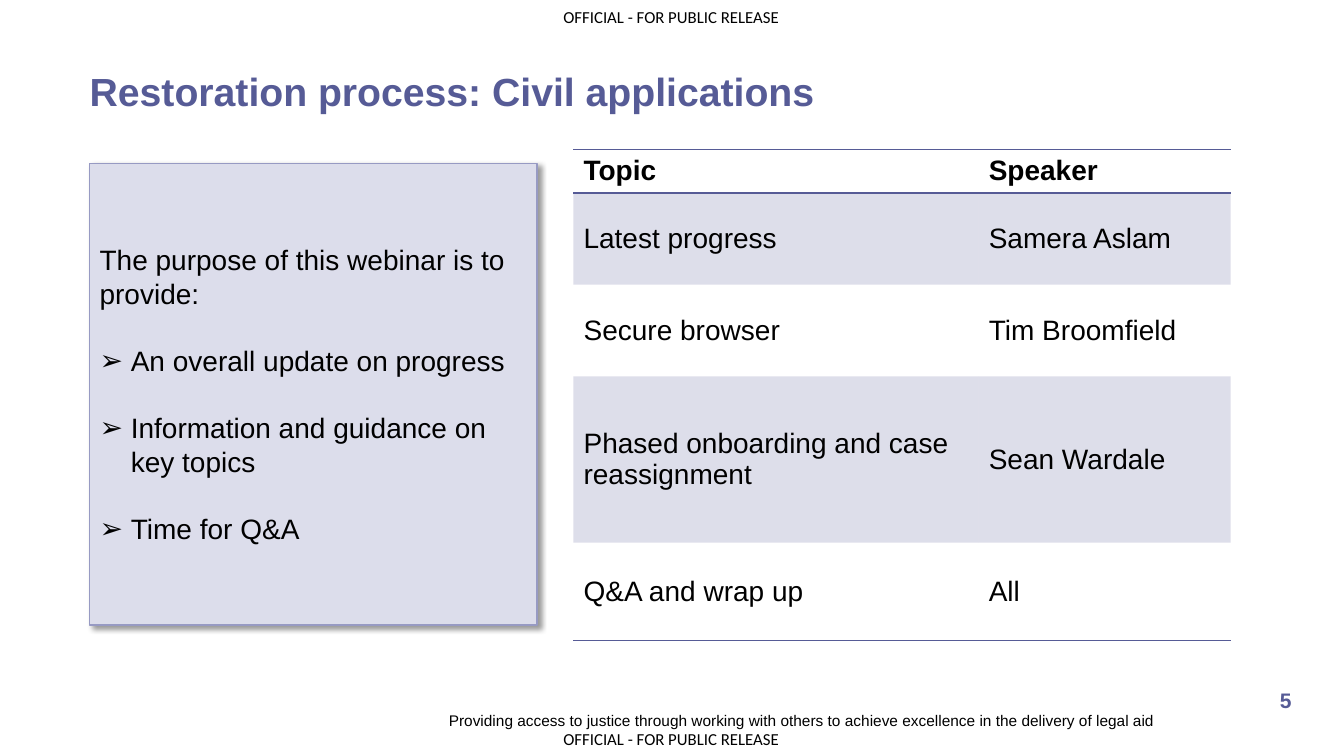
from lxml import etree
from pptx import Presentation
from pptx.dml.color import RGBColor
from pptx.enum.shapes import MSO_SHAPE
from pptx.enum.text import MSO_ANCHOR, PP_ALIGN
from pptx.oxml import parse_xml
from pptx.oxml.ns import qn
from pptx.util import Inches, Pt

RECT = MSO_SHAPE.RECTANGLE
MIDDLE, TOP = MSO_ANCHOR.MIDDLE, MSO_ANCHOR.TOP
LEFT, CENTER, RIGHT = PP_ALIGN.LEFT, PP_ALIGN.CENTER, PP_ALIGN.RIGHT
NS = 'xmlns:a="http://schemas.openxmlformats.org/drawingml/2006/main"'
PLAIN_TABLE = "{2D5ABB26-0587-4C30-8999-92F81FD0307C}"
COLORS = {"text": "000000", "accent": "565B96", "panel": "DCDDEB", "edge": "979AC3"}
FORMATS = {
    "marking": {"name": "Calibri", "size": Pt(12), "bold": False},
    "title": {"name": "Arial", "size": Pt(28), "bold": True},
    "tagline": {"name": "Arial", "size": Pt(11), "bold": False},
    "body": {"name": "Arial", "size": Pt(20), "bold": False},
    "header": {"name": "Arial", "size": Pt(20), "bold": True},
    "number": {"name": "Arial", "size": Pt(15), "bold": True},
}
MARKING = "OFFICIAL - FOR PUBLIC RELEASE"
TAGLINE = ("Providing access to justice through working with others "
           "to achieve excellence in the delivery of legal aid")
PURPOSE = "The purpose of this webinar is to provide:"
AIMS = ["An overall update on progress", "Information and guidance on key topics",
        "Time for Q&A"]
AGENDA = [
    ("Topic", "Speaker"),
    ("Latest progress", "Samera Aslam"),
    ("Secure browser", "Tim Broomfield"),
    ("Phased onboarding and case reassignment", "Sean Wardale"),
    ("Q&A and wrap up", "All"),
]


def rgb(key):
    """Return a palette colour."""
    return RGBColor.from_string(COLORS[key])


class SlideBuilder:
    """Draws styled elements on one slide, with lengths in percent of its size."""

    def __init__(self, prs):
        """Add a title-only slide."""
        self.prs = prs
        self.s = prs.slides.add_slide(prs.slide_layouts[5])

    def x(self, share):
        """Convert a percentage of the slide width."""
        return round(self.prs.slide_width * share / 100)

    def y(self, share):
        """Convert a percentage of the slide height."""
        return round(self.prs.slide_height * share / 100)

    def box(self, left, top, width, height):
        """Convert a frame given in percent."""
        return self.x(left), self.y(top), self.x(width), self.y(height)

    def add_text(self, p, text, style, color="text", align=LEFT):
        """Add one formatted run to a paragraph."""
        p.alignment = align
        r = p.add_run()
        r.text = text
        for key, value in FORMATS[style].items():
            setattr(r.font, key, value)
        r.font.color.rgb = rgb(color)

    def frame(self, tf, anchor=MIDDLE, wrap=True):
        """Remove the margins of a text frame and set its anchor."""
        values = dict.fromkeys(
            ("margin_left", "margin_top", "margin_right", "margin_bottom"), 0)
        values.update(vertical_anchor=anchor, word_wrap=wrap)
        for key, value in values.items():
            setattr(tf, key, value)

    def title(self, frame, text):
        """Place and fill the title placeholder."""
        sp = self.s.shapes.title
        sp.left, sp.top, sp.width, sp.height = self.box(*frame)
        self.frame(sp.text_frame)
        self.add_text(sp.text_frame.paragraphs[0], text, "title", "accent")

    def label(self, frame, text, style, anchor=MIDDLE, wrap=True, **options):
        """Add a text box with one paragraph."""
        tf = self.s.shapes.add_textbox(*self.box(*frame)).text_frame
        self.frame(tf, anchor, wrap)
        self.add_text(tf.paragraphs[0], text, style, **options)

    def panel(self, frame, intro, bullets):
        """Add the shadowed panel with an introduction and arrow bullets."""
        sp = self.s.shapes.add_shape(RECT, *self.box(*frame))
        sp.fill.solid()
        sp.fill.fore_color.rgb = rgb("panel")
        sp.line.color.rgb = rgb("edge")
        sp.line.width = Pt(1)
        sp.shadow.inherit = False
        sp._element.spPr.find(qn("a:effectLst")).append(parse_xml(
            f'<a:outerShdw {NS} blurRad="{Pt(4)}" dist="{Pt(3)}" dir="2700000" '
            f'algn="tl" rotWithShape="0"><a:srgbClr val="{COLORS["text"]}">'
            '<a:alpha val="40000"/></a:srgbClr></a:outerShdw>'))
        tf = sp.text_frame
        tf.word_wrap, tf.vertical_anchor = True, MIDDLE
        for i, text in enumerate([intro, *bullets]):
            p = tf.add_paragraph() if i else tf.paragraphs[0]
            p.space_after = Pt(24)
            if i:
                pPr = p._p.get_or_add_pPr()
                pPr.set("marL", str(Inches(0.31)))
                pPr.set("indent", str(-Inches(0.31)))
                etree.SubElement(pPr, qn("a:buFont")).set("typeface", "Arial")
                etree.SubElement(pPr, qn("a:buChar")).set("char", "➢")
            self.add_text(p, text, "body")

    def table(self, left, top, cols, rows, data):
        """Add a table with tinted alternate rows and horizontal rules."""
        area = self.box(left, top, sum(cols), sum(rows))
        table = self.s.shapes.add_table(len(rows), len(cols), *area).table
        table.first_row = table.horz_banding = False
        table._tbl.tblPr.find(qn("a:tableStyleId")).text = PLAIN_TABLE
        for column, width in zip(table.columns, cols):
            column.width = self.x(width)
        for i, (row, height, texts) in enumerate(zip(table.rows, rows, data)):
            row.height = self.y(height)
            sides = {0: ("lnT", "lnB"), len(rows) - 1: ("lnB",)}.get(i, ())
            for cell, text in zip(row.cells, texts):
                cell.vertical_anchor = MIDDLE
                self.add_text(cell.text_frame.paragraphs[0], text,
                              "body" if i else "header")
                self.paint(cell, sides, i % 2 == 1)

    def paint(self, cell, sides, tinted):
        """Set the rules and the fill of a table cell."""
        tcPr = cell._tc.get_or_add_tcPr()
        for side in sides:
            tcPr.append(parse_xml(
                f'<a:{side} {NS} w="{Pt(1)}"><a:solidFill>'
                f'<a:srgbClr val="{COLORS["accent"]}"/></a:solidFill></a:{side}>'))
        if not tinted:
            cell.fill.background()
            return
        cell.fill.solid()
        cell.fill.fore_color.rgb = rgb("accent")
        color = tcPr.find(qn("a:solidFill")).find(qn("a:srgbClr"))
        etree.SubElement(color, qn("a:alpha")).set("val", "20000")


def main():
    """Build and save the slide."""
    prs = Presentation()
    prs.slide_width, prs.slide_height = Inches(13.33), Inches(7.5)
    b = SlideBuilder(prs)
    for top in (0.93, 96.4):
        b.label((41.92, top, 16.35, 2.67), MARKING, "marking", TOP, False)
    b.title((6.67, 5.47, 88, 13.07), "Restoration process: Civil applications")
    b.label((26.85, 94, 59.1, 2.67), TAGLINE, "tagline", align=RIGHT)
    b.panel((6.67, 21.6, 33.3, 61.07), PURPOSE, AIMS)
    b.table(42.67, 19.73, (30.15, 18.75), (5.47, 12.13, 12.13, 22, 12.93), AGENDA)
    b.label((93.82, 90, 3.67, 5.33), "5", "number", color="accent", align=CENTER)
    prs.save("out.pptx")


if __name__ == "__main__":
    main()
